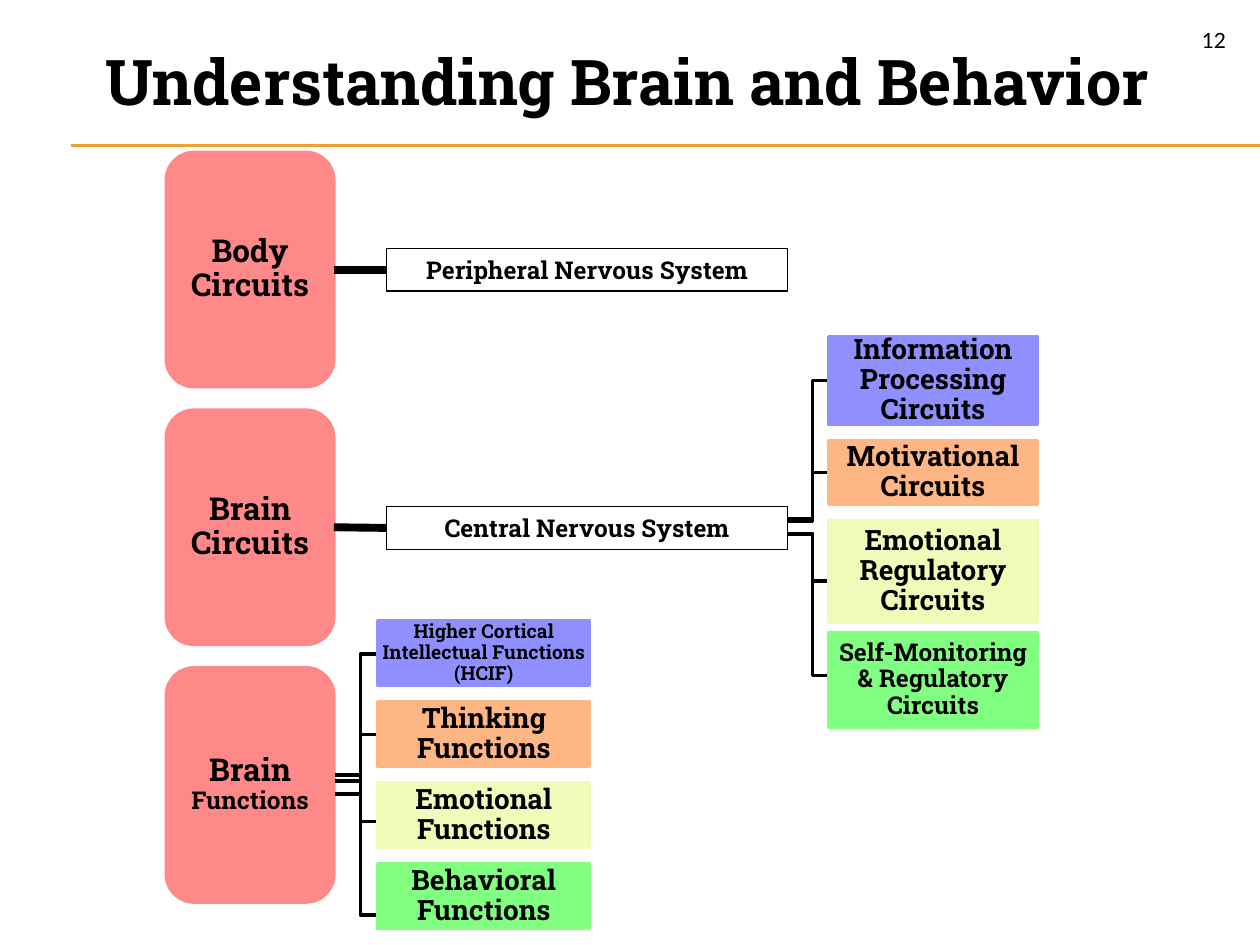
from dataclasses import dataclass

from lxml import etree
from pptx import Presentation
from pptx.dml.color import RGBColor
from pptx.enum.shapes import MSO_CONNECTOR, MSO_SHAPE
from pptx.enum.text import MSO_ANCHOR, PP_ALIGN
from pptx.oxml.ns import qn
from pptx.util import Inches, Pt

STRAIGHT = MSO_CONNECTOR.STRAIGHT
RECT, ROUNDED = MSO_SHAPE.RECTANGLE, MSO_SHAPE.ROUNDED_RECTANGLE
MIDDLE, TOP = MSO_ANCHOR.MIDDLE, MSO_ANCHOR.TOP
CENTER, RIGHT = PP_ALIGN.CENTER, PP_ALIGN.RIGHT
LEFT_SIDE, RIGHT_SIDE = 1, 3


@dataclass(frozen=True)
class Theme:
    """Colours, fonts and type sizes of the slide."""
    black: str = "000000"
    white: str = "FFFFFF"
    rule: str = "F0A22E"
    stage: str = "FF8989"
    levels: tuple = ("8F8FFF", "FFB685", "F1FAB8", "81FF81")
    font: str = "Roboto Slab"
    number_font: str = "Lato"
    title: int = 36
    heading: int = 18
    branch: int = 16
    label: int = 14
    number: int = 12
    small: int = 11


THEME = Theme()


def write(shape, runs, size, font=THEME.font, bold=True, align=CENTER,
          anchor=MIDDLE, margins=(0.1, 0.05), spacing=1.0):
    """Fill a shape with one paragraph made of (text, own size) runs."""
    tf = shape.text_frame
    tf.word_wrap = True
    tf.vertical_anchor = anchor
    tf.margin_left = tf.margin_right = Inches(margins[0])
    tf.margin_top = tf.margin_bottom = Inches(margins[1])
    p = tf.paragraphs[0]
    p.alignment = align
    p.line_spacing = spacing
    p.font.name, p.font.size, p.font.bold = font, Pt(size), bold
    p.font.color.rgb = RGBColor.from_string(THEME.black)
    for text, own_size in runs:
        r = p.add_run()
        r.text = text
        if own_size:
            r.font.size = Pt(own_size)


def add_box(s, kind, box, fill, line, width):
    """Add a filled and outlined shape."""
    sp = s.shapes.add_shape(kind, *map(Inches, box))
    sp.shadow.inherit = False
    sp.fill.solid()
    sp.fill.fore_color.rgb = RGBColor.from_string(fill)
    sp.line.color.rgb = RGBColor.from_string(line)
    sp.line.width = Pt(width)
    return sp


def add_line(s, start, end, color, width):
    """Add a straight connector without a shadow."""
    line = s.shapes.add_connector(STRAIGHT, *map(Inches, (*start, *end)))
    line.line.color.rgb = RGBColor.from_string(color)
    line.line.width = Pt(width)
    etree.SubElement(line._element.spPr, qn("a:effectLst"))
    return line


def add_elbow(s, points):
    """Add an open line that runs through the points."""
    emu = [(Inches(x), Inches(y)) for x, y in points]
    builder = s.shapes.build_freeform(*emu[0])
    builder.add_line_segments(emu[1:], close=False)
    sp = builder.convert_to_shape()
    sp.shadow.inherit = False
    sp.fill.background()
    sp.line.color.rgb = RGBColor.from_string(THEME.black)
    sp.line.width = Pt(2)


def add_header(s, box, title, number):
    """Place the title, slide number and double rule in the header box."""
    x, y, w, h = box
    for offset in (0, 0.01):
        add_line(s, (x + 0.56, y + h + offset), (x + w, y + h + offset),
                 THEME.rule, 0.75)
    tb = s.shapes.add_textbox(*map(Inches, (x + 0.23, y + 0.29, 9.5, 0.71)))
    write(tb, [(title, None)], THEME.title, anchor=TOP)
    tb = s.shapes.add_textbox(*map(Inches, (x + w - 1, y + 0.17, 0.83, 0.27)))
    write(tb, [(number, None)], THEME.number, THEME.number_font, False, RIGHT, TOP)


def add_stages(s, box, stages, height):
    """Stack rounded stages evenly in the box and return them."""
    x, y, w, h = box
    pitch = (h - height) / (len(stages) - 1)
    shapes = []
    for i, runs in enumerate(stages):
        sp = add_box(s, ROUNDED, (x, y + i * pitch, w, height),
                     THEME.stage, THEME.stage, 2)
        write(sp, runs, THEME.heading, margins=(0.13, 0.1), spacing=0.9)
        shapes.append(sp)
    return shapes


def add_system(s, box, name, stage):
    """Add a nervous system box joined to its stage."""
    x, y, w, h = box
    sp = add_box(s, RECT, box, THEME.white, THEME.black, 0.75)
    write(sp, [(name, None)], THEME.label)
    link = add_line(s, (x - 0.42, y + h / 2), (x, y + h / 2), THEME.black, 4.5)
    link.begin_connect(stage, RIGHT_SIDE)
    link.end_connect(sp, LEFT_SIDE)


def add_branches(s, box, gutter, branches):
    """Add coloured branches (text, size, top, height, from y, to y) and elbows."""
    x, y, w = box
    start, bend, end = x - gutter, x - gutter + 0.2, x + 0.05
    for *_, from_y, to_y in reversed(branches):
        add_elbow(s, [(start, y + from_y), (bend, y + from_y),
                      (bend, y + to_y), (end, y + to_y)])
    for color, (text, size, top, height, *_) in zip(THEME.levels, branches):
        sp = add_box(s, RECT, (x, y + top, w, height), color, color, 2)
        write(sp, [(text, None)], size, margins=(0.01, 0.01), spacing=0.9)


def main():
    """Build the slide and save it."""
    prs = Presentation()
    prs.slide_width, prs.slide_height = Inches(10), Inches(7.5)
    s = prs.slides.add_slide(prs.slide_layouts[6])

    add_header(s, (0, 0, 10, 1.15), "Understanding Brain and Behavior", "12")
    body, brain, _ = add_stages(s, (1.32, 1.21, 1.33, 5.95), [
        [("Body Circuits", None)],
        [("Brain Circuits", None)],
        [("Brain ", None), ("Functions", THEME.label)],
    ], 1.86)

    functions = [
        ("Higher Cortical Intellectual Functions (HCIF)", THEME.small, 1.37, 0.26),
        ("Thinking Functions", THEME.branch, 1.27, 0.9),
        ("Emotional Functions", THEME.branch, 1.22, 1.59),
        ("Behavioral Functions", THEME.branch, 1.22, 2.33),
    ]
    add_branches(s, (3, 4.93, 1.68), 0.34, [
        (text, size, i * 0.643, 0.51, from_y, to_y)
        for i, (text, size, from_y, to_y) in enumerate(functions)])
    add_branches(s, (6.58, 2.67, 1.65), 0.33, [
        ("Information Processing Circuits", THEME.branch, 0, 0.7, 1.47, 0.35),
        ("Motivational Circuits", THEME.branch, 0.83, 0.5, 1.45, 1.08),
        ("Emotional Regulatory Circuits", THEME.branch, 1.46, 0.81, 1.57, 1.94),
        ("Self-Monitoring & Regulatory Circuits", THEME.label, 2.35, 0.75, 1.57, 2.69),
    ])

    add_system(s, (3.07, 1.97, 3.18, 0.34), "Peripheral Nervous System", body)
    add_system(s, (3.07, 4.02, 3.18, 0.34), "Central Nervous System", brain)
    prs.save("out.pptx")


if __name__ == "__main__":
    main()
